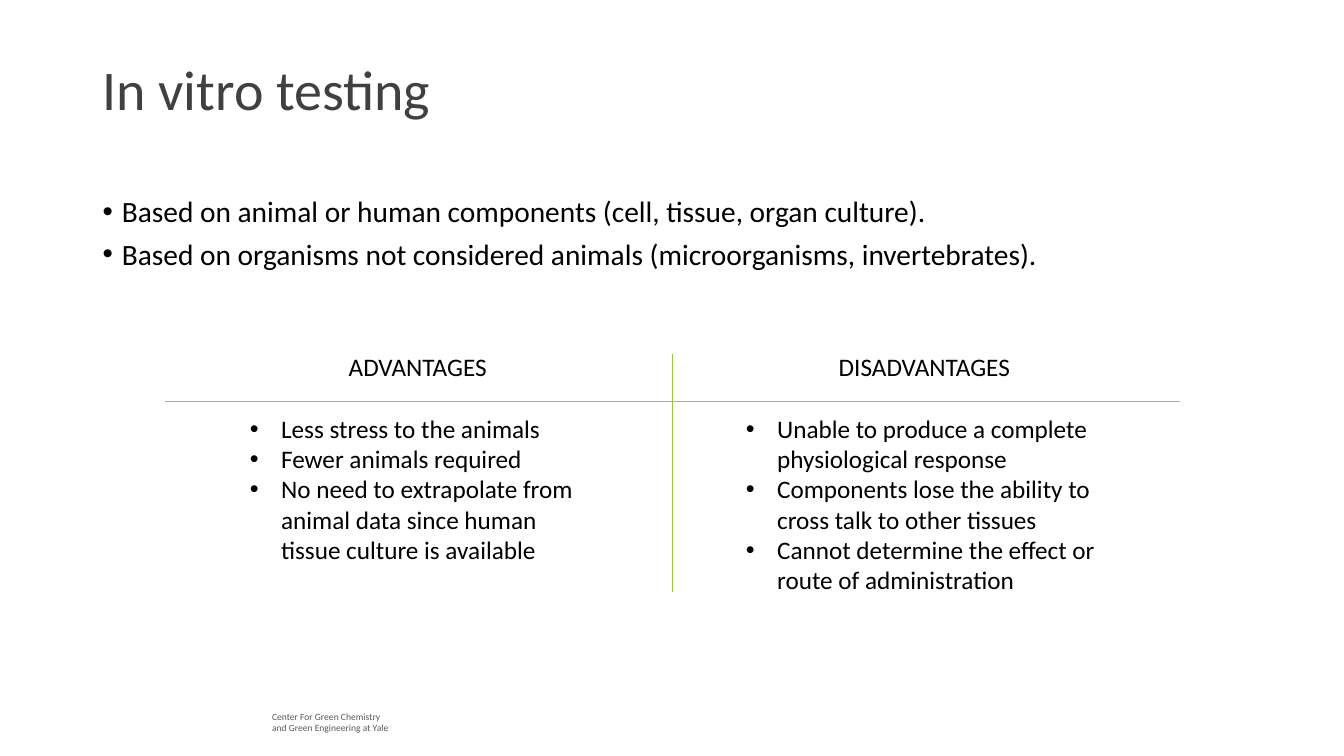
from lxml import etree
from pptx import Presentation
from pptx.dml.color import RGBColor
from pptx.enum.shapes import MSO_CONNECTOR
from pptx.enum.text import MSO_ANCHOR
from pptx.oxml.ns import qn
from pptx.util import Inches, Pt

STRAIGHT = MSO_CONNECTOR.STRAIGHT
TOP, MIDDLE = MSO_ANCHOR.TOP, MSO_ANCHOR.MIDDLE
FONT = "Calibri"
COLORS = {
    "text": "000000",
    "title": "404040",
    "footer": "595959",
    "axis": "99CB38",
    "blue": "4EB3CF",
    "teal": "44C1A3",
    "green": "37A76F",
}
TITLE_RULES = [(0.92, 9.77, 1.41, "blue"), (0.9, 11.71, 1.48, "teal"), (0.91, 12.42, 1.55, "green")]
DEFINITION = [
    "Based on animal or human components (cell, tissue, organ culture).",
    "Based on organisms not considered animals (microorganisms, invertebrates).",
]
ADVANTAGES = [
    "Less stress to the animals",
    "Fewer animals required",
    "No need to extrapolate from animal data since human tissue culture is available",
]
DISADVANTAGES = [
    "Unable to produce a complete physiological response",
    "Components lose the ability to cross talk to other tissues",
    "Cannot determine the effect or route of administration",
]


def add_bullet(para, indent):
    """Give a paragraph a round bullet with a hanging indent."""
    properties = para._p.get_or_add_pPr()
    properties.set("marL", str(Inches(indent)))
    properties.set("indent", str(-Inches(indent)))
    etree.SubElement(properties, qn("a:buFont"), typeface="Arial")
    etree.SubElement(properties, qn("a:buChar"), char="•")


def add_text(page, place, lines, size, color="text", indent=0, spacing=1.0, gap=0, anchor=TOP, wrap=True):
    """Add a text box with one paragraph per line, bulleted when indented."""
    box = page.shapes.add_textbox(*(Inches(length) for length in place))
    frame = box.text_frame
    frame.word_wrap = wrap
    frame.vertical_anchor = anchor
    for index, line in enumerate(lines):
        para = frame.paragraphs[0] if index == 0 else frame.add_paragraph()
        para.line_spacing = spacing
        para.space_before = Pt(gap if index else 0)
        if indent:
            add_bullet(para, indent)
        span = para.add_run()
        span.text = line
        span.font.name = FONT
        span.font.size = Pt(size)
        span.font.color.rgb = RGBColor.from_string(COLORS[color])


def add_rule(page, start, end, color, opacity=100):
    """Add a thin straight line without shadow."""
    rule = page.shapes.add_connector(STRAIGHT, *(Inches(length) for length in start + end))
    rule.line.width = Pt(0.5)
    rule.line.color.rgb = RGBColor.from_string(COLORS[color])
    if opacity < 100:
        tint = rule._element.spPr.find(".//" + qn("a:srgbClr"))
        etree.SubElement(tint, qn("a:alpha"), val=str(opacity * 1000))
    etree.SubElement(rule._element.spPr, qn("a:effectLst"))


def add_column(page, heading, heading_place, points, points_place):
    """Add one side of the comparison: a heading and its bullets."""
    add_text(page, points_place, points, 18, indent=0.31)
    add_text(page, heading_place, [heading], 18, wrap=False)


def main():
    """Build the slide and save it."""
    deck = Presentation()
    deck.slide_width, deck.slide_height = Inches(13.33), Inches(7.5)
    page = deck.slides.add_slide(deck.slide_layouts[6])

    footer = ["Center For Green Chemistry", "and Green Engineering at Yale"]
    add_text(page, (2.6, 7, 1.86, 0.33), footer, 6.8, "footer")
    for left, right, height, color in TITLE_RULES:
        add_rule(page, (left, height), (right, height), color, opacity=2)
    add_text(page, (0.92, 0.19, 11.5, 1.45), ["In vitro testing"], 40, "title", spacing=0.9, anchor=MIDDLE)
    add_text(page, (0.92, 1.91, 11.5, 1.23), DEFINITION, 21, indent=0.19, spacing=0.9, gap=7.5)

    add_column(page, "ADVANTAGES", (3.36, 3.44, 1.58, 0.4), ADVANTAGES, (2.38, 4.05, 3.53, 1.62))
    add_column(page, "DISADVANTAGES", (8.22, 3.44, 1.92, 0.4), DISADVANTAGES, (7.3, 4.05, 3.77, 1.92))
    add_rule(page, (1.64, 3.98), (11.7, 3.98), "axis")
    add_rule(page, (6.67, 3.51), (6.67, 5.87), "axis")
    deck.save("out.pptx")


if __name__ == "__main__":
    main()
